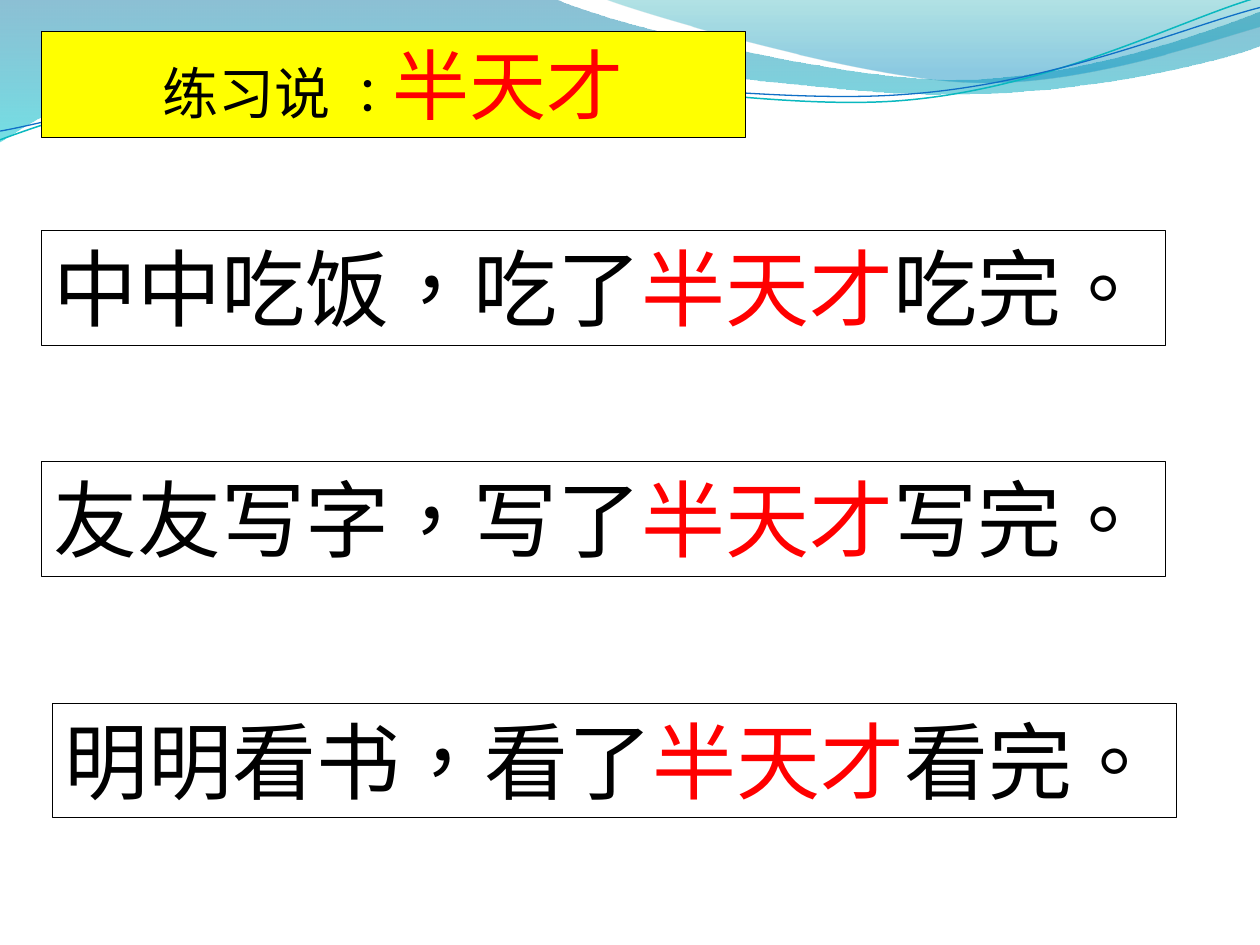
from itertools import chain
from math import cos, radians, sin
from lxml.etree import SubElement
from pptx import Presentation
from pptx.dml.color import RGBColor
from pptx.enum.text import MSO_ANCHOR as Anchor, MSO_AUTO_SIZE as AutoSize, PP_ALIGN as Align
from pptx.oxml.ns import qn
from pptx.util import Pt

FONT = "Noto Sans CJK SC"
PHRASE = "半天才"
BLACK, RED, YELLOW = "000000", "FF0000", "FFFF00"
UNITS = 100
TILT = -2.7

UPPER_WAVE = [
    (0, 0), [(317, -0.7)],
    [(342.7, 12.2), (478.1, 45.4), (545.8, 45.4)],
    [(614.2, 45.4), (689.8, 18.7), (720, 6.5)],
    [(720.7, 25.9)],
    [(707.8, 31.7), (626.4, 54.7), (537.1, 54)],
    [(447.8, 54), (275, 20.2), (185, 24.5)],
    [(92.9, 25.9), (33.1, 59.8), (-0.7, 81.4)],
]
RIGHT_WAVE = [
    (344.9, -0.7),
    [(366.5, 7.9), (491, 44.6), (553.7, 46.8)],
    [(616.3, 49.7), (691.9, 23), (720, 15.1)],
    [(720, 0)],
]
TEAL_LINE = [
    (0, 79.9),
    [(34.6, 67), (113.8, 41), (199.4, 37.4)],
    [(284.4, 33.8), (427, 64.1), (513.4, 57.6)],
    [(599.8, 51.1), (675.4, 10.8), (718.6, -1.4)],
]
BLUE_LINE = [
    (0, 74.9),
    [(33.8, 69.1), (118.1, 43.9), (203.8, 40.3)],
    [(290.2, 36.7), (429.8, 60.5), (516.2, 54)],
    [(601.9, 48.2), (677.5, 15.1), (720, 4.3)],
]


def rgb(color):
    """Turn a hex string into a colour."""
    return RGBColor.from_string(color)


def turn(point, degrees, center=(359.3, 41.4)):
    """Turn a point clockwise about a centre."""
    a = radians(degrees)
    x, y = point[0] - center[0], point[1] - center[1]
    return center[0] + x * cos(a) - y * sin(a), center[1] + x * sin(a) + y * cos(a)


def add_curve(s, outline, close, tilt=0):
    """Draw an outline of straight and cubic segments as a freeform."""
    start, *segments = outline
    points = [tuple(UNITS * c for c in turn(point, -tilt))
              for point in chain([start], *segments)]
    builder = s.shapes.build_freeform(*points[0], scale=Pt(1) / UNITS)
    builder.add_line_segments(points[1:], close=close)
    sp = builder.convert_to_shape()
    sp.rotation = tilt
    sp.shadow.inherit = False
    nodes = iter(list(sp._element.iter(qn("a:lnTo"))))
    for segment in segments:
        first, *others = [next(nodes) for _ in segment]
        if others:
            first.tag = qn("a:cubicBezTo")
        for node in others:
            first.append(node[0])
            node.getparent().remove(node)
    return sp


def add_wave(s, outline, stops):
    """Draw a wave filled from top to bottom with translucent colours."""
    sp = add_curve(s, outline, True)
    sp.line.fill.background()
    sp.fill.gradient()
    sp.fill.gradient_angle = 270
    for stop, (position, color, _) in zip(sp.fill.gradient_stops, stops):
        stop.position = position
        stop.color.rgb = rgb(color)
    for node, (_, _, opacity) in zip(sp._element.spPr.iter(qn("a:srgbClr")), stops):
        SubElement(node, qn("a:alpha"), val=str(opacity * 1000))


def add_swoosh(s, outline, color, width):
    """Draw a thin curved line."""
    sp = add_curve(s, outline, False, TILT)
    sp.fill.background()
    sp.line.color.rgb = rgb(color)
    sp.line.width = Pt(width)


def fill_box(sp, runs, align):
    """Give a box its outline and its runs of text, size and colour."""
    sp.line.color.rgb = rgb(BLACK)
    sp.line.width = Pt(0.75)
    tf = sp.text_frame
    tf.word_wrap = True
    tf.auto_size = AutoSize.SHAPE_TO_FIT_TEXT
    tf.vertical_anchor = Anchor.TOP
    p = tf.paragraphs[0]
    p.alignment = align
    for text, size, color in runs:
        r = p.add_run()
        r.text = text
        r.font.size = Pt(size)
        r.font.name = FONT
        r.font.color.rgb = rgb(color)
        r.font._element.set("lang", "zh-TW")
        SubElement(r.font._element, qn("a:ea"), typeface=FONT)


def add_title(s):
    """Place the yellow title above the waves."""
    sp = s.shapes.title
    s.shapes._spTree.append(sp._element)
    sp.left, sp.top, sp.width, sp.height = Pt(23.6), Pt(18), Pt(402.4), Pt(60.5)
    sp.fill.solid()
    sp.fill.fore_color.rgb = rgb(YELLOW)
    fill_box(sp, [("练习说 ", 32, BLACK), ("：", 28, BLACK), (PHRASE, 44, RED)], Align.CENTER)


def add_sentence(s, left, top, start, end):
    """Add a boxed sentence with the phrase in red."""
    sp = s.shapes.add_textbox(Pt(left), Pt(top), Pt(642.4), Pt(65.5))
    fill_box(sp, [(start, 48, BLACK), (PHRASE, 48, RED), (end, 48, BLACK)], Align.LEFT)


def main():
    """Build the slide and save it."""
    prs = Presentation()
    prs.slide_width, prs.slide_height = Pt(720), Pt(540)
    s = prs.slides.add_slide(prs.slide_layouts[5])
    add_wave(s, UPPER_WAVE, [(0, "0074A1", 45), (1, "00C6CF", 55)])
    add_wave(s, RIGHT_WAVE, [(0, "00A1A9", 30), (0.8, "008BBF", 45)])
    add_swoosh(s, TEAL_LINE, "0AB8BF", 0.85)
    add_swoosh(s, BLUE_LINE, "0F6FC6", 0.75)
    add_title(s)
    add_sentence(s, 23.6, 131.8, "中中吃饭，吃了", "吃完。")
    add_sentence(s, 23.6, 263.8, "友友写字，写了", "写完。")
    add_sentence(s, 29.9, 401.8, "明明看书，看了", "看完。")
    prs.save("out.pptx")


if __name__ == "__main__":
    main()
